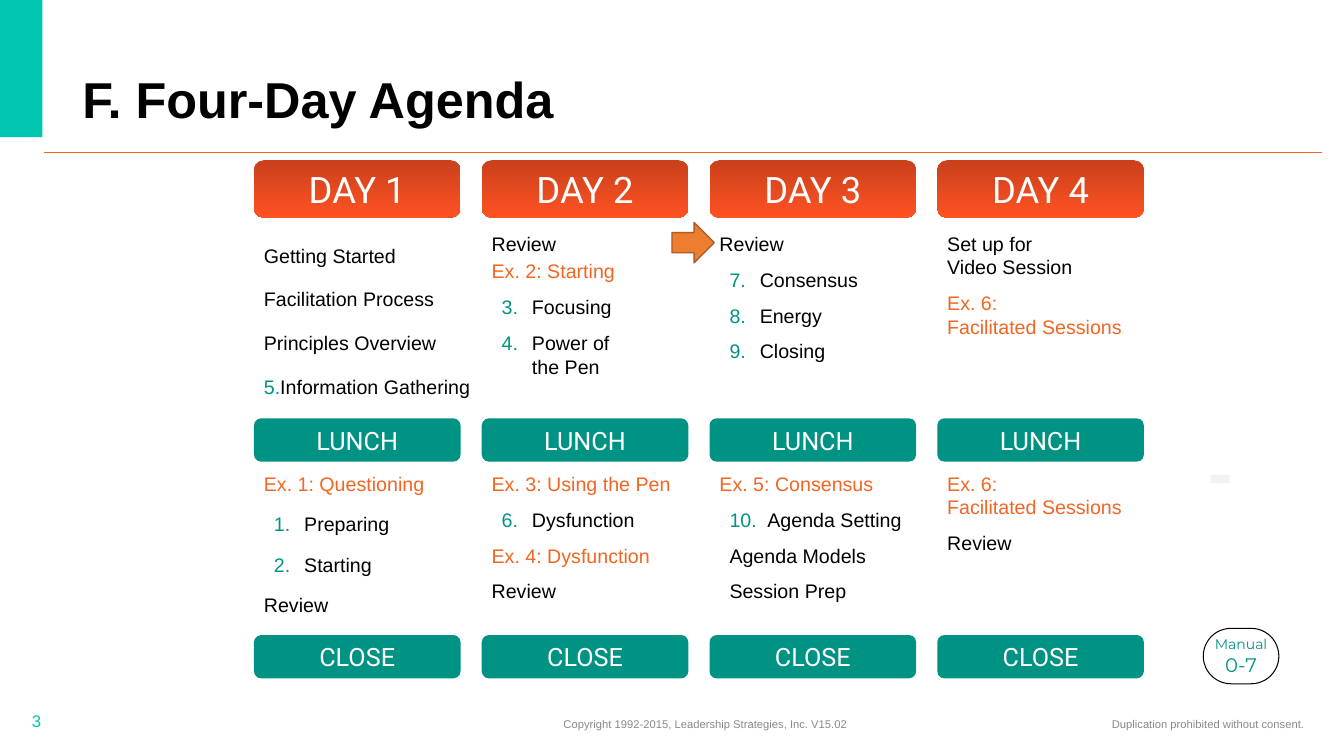
from copy import deepcopy
from dataclasses import dataclass
from typing import NamedTuple, Optional, Sequence

from lxml.etree import SubElement
from pptx import Presentation
from pptx.dml.color import RGBColor
from pptx.enum.shapes import MSO_CONNECTOR, MSO_SHAPE
from pptx.enum.text import MSO_ANCHOR, PP_ALIGN
from pptx.oxml.ns import qn
from pptx.util import Pt


@dataclass(frozen=True)
class Theme:
    black: str = "000000"
    white: str = "FFFFFF"
    teal: str = "009383"
    mint: str = "00C7B1"
    orange: str = "F26522"
    day_top: str = "C9401B"
    day_bottom: str = "FF5223"
    arrow: str = "ED7D31"
    arrow_edge: str = "AF5C24"
    grey: str = "898989"
    pale: str = "F2F2F2"
    text: str = "Arial"
    band: str = "Roboto"
    badge: str = "Montserrat"
    title_size: float = 36
    day_size: float = 26
    break_size: float = 18
    body_size: float = 14
    badge_size: float = 10
    dash_size: float = 48
    footer_size: float = 8
    page_size: float = 12


THEME = Theme()


class Box(NamedTuple):
    left: float
    top: float
    width: float
    height: float


class Line(NamedTuple):
    text: str
    color: Optional[str] = None
    number: Optional[int] = None
    margin: float = 0
    hanging: float = 0
    after: Optional[float] = None
    size: Optional[float] = None


class Day(NamedTuple):
    name: str
    morning: Sequence[Line]
    afternoon: Sequence[Line]
    morning_leading: float = 1
    morning_before: float = 2.8
    afternoon_before: float = 2.8
    morning_width: float = 147.6


def exercise(text: str) -> Line:
    return Line(text, THEME.orange)


def module(number: int, text: str, margin: float = 28.8, hanging: float = 21.6) -> Line:
    return Line(text, number=number, margin=margin, hanging=hanging)


# Agenda content
DAYS = [
    Day("DAY 1",
        [Line("Getting Started"), Line("Facilitation Process"), Line("Principles Overview"),
         module(5, "Information Gathering", 9.36, 9.36)],
        [exercise("Ex. 1: Questioning"), module(1, "Preparing"), module(2, "Starting"),
         Line("Review")],
        morning_leading=1.5, morning_before=0, afternoon_before=6, morning_width=187.9),
    Day("DAY 2",
        [Line("Review", after=0), exercise("Ex. 2: Starting"), module(3, "Focusing"),
         module(4, "Power of\nthe Pen")],
        [exercise("Ex. 3: Using the Pen"), module(6, "Dysfunction"),
         exercise("Ex. 4: Dysfunction"), Line("Review")]),
    Day("DAY 3",
        [Line("Review"), module(7, "Consensus"), module(8, "Energy"), module(9, "Closing")],
        [exercise("Ex. 5: Consensus"), module(10, "Agenda Setting", 34.2, 27),
         Line("Agenda Models", margin=34.2, hanging=27),
         Line("Session Prep", margin=28.8, hanging=21.6)]),
    Day("DAY 4",
        [Line("Set up for\nVideo Session"), exercise("Ex. 6:\nFacilitated Sessions")],
        [exercise("Ex. 6:\nFacilitated Sessions"), Line("Review")]),
]
FIRST_LEFT, DAY_PITCH, DAY_WIDTH = 181.4, 162.7, 147.6


def rgb(value: str) -> RGBColor:
    return RGBColor.from_string(value)


def add_number(paragraph, number: int) -> None:
    props = paragraph._p.get_or_add_pPr()
    SubElement(SubElement(props, qn("a:buClr")), qn("a:srgbClr"), val=THEME.teal)
    SubElement(props, qn("a:buFont"), typeface=THEME.text)
    SubElement(props, qn("a:buAutoNum"), type="arabicPeriod", startAt=str(number))


def write(frame, lines: Sequence[Line], *, size: float, color: str = THEME.black,
          font: str = THEME.text, bold: bool = False, align=PP_ALIGN.LEFT,
          anchor=MSO_ANCHOR.TOP, wrap: bool = True, leading: float = 1,
          before: float = 0, after: float = 0) -> None:
    frame.word_wrap = wrap
    frame.vertical_anchor = anchor
    start = None
    for index, line in enumerate(lines):
        paragraph = frame.paragraphs[0] if index == 0 else frame.add_paragraph()
        paragraph.text = line.text
        paragraph.alignment = align
        paragraph.line_spacing = leading
        paragraph.space_before = Pt(before if index else 0)
        paragraph.space_after = Pt(after if line.after is None else line.after)
        if line.hanging:
            props = paragraph._p.get_or_add_pPr()
            props.set("marL", str(Pt(line.margin)))
            props.set("indent", str(-Pt(line.hanging)))
        # A run of numbered lines shares the number it starts from
        start = None if line.number is None else (start or line.number)
        if start is not None:
            add_number(paragraph, start)
        for run in paragraph.runs:
            run.font.name = font
            run.font.size = Pt(line.size or size)
            run.font.bold = bold
            run.font.color.rgb = rgb(line.color or color)
        for line_break in paragraph._p.findall(qn("a:br")):
            line_break.insert(0, deepcopy(paragraph.runs[0]._r.rPr))


def add_text(slide, box: Box, lines: Sequence[Line], **style) -> None:
    write(slide.shapes.add_textbox(*map(Pt, box)).text_frame, lines, **style)


def add_block(slide, kind, box: Box, fill: str, edge: Optional[str] = None,
              edge_width: float = 1):
    block = slide.shapes.add_shape(kind, *map(Pt, box))
    block.shadow.inherit = False
    block.fill.solid()
    block.fill.fore_color.rgb = rgb(fill)
    if edge:
        block.line.color.rgb = rgb(edge)
        block.line.width = Pt(edge_width)
    else:
        block.line.fill.background()
    return block


def add_band(slide, box: Box, label: str, size: float):
    band = add_block(slide, MSO_SHAPE.ROUNDED_RECTANGLE, box, THEME.teal)
    write(band.text_frame, [Line(label)], size=size, color=THEME.white, font=THEME.band,
          align=PP_ALIGN.CENTER, anchor=MSO_ANCHOR.MIDDLE)
    return band


def add_day(slide, left: float, day: Day) -> None:
    header = add_band(slide, Box(left, 114.5, DAY_WIDTH, 41), day.name, THEME.day_size)
    header.fill.gradient()
    header.fill.gradient_angle = 270
    for stop, color, position in zip(header.fill.gradient_stops,
                                     (THEME.day_top, THEME.day_bottom), (0, 1)):
        stop.color.rgb = rgb(color)
        stop.position = position
    for top, label in ((298.8, "LUNCH"), (453.6, "CLOSE")):
        add_band(slide, Box(left, top, DAY_WIDTH, 31), label, THEME.break_size)
    add_text(slide, Box(left, 162, day.morning_width, 136), day.morning,
             size=THEME.body_size, leading=day.morning_leading,
             before=day.morning_before, after=6)
    add_text(slide, Box(left, 333.4, DAY_WIDTH, 120), day.afternoon,
             size=THEME.body_size, before=day.afternoon_before, after=6)


def main() -> None:
    deck = Presentation()
    deck.slide_width, deck.slide_height = Pt(960), Pt(540)
    slide = deck.slides.add_slide(deck.slide_layouts[6])

    # Title and its rule
    add_block(slide, MSO_SHAPE.RECTANGLE, Box(-1.4, -1.4, 31.7, 99.4), THEME.mint)
    rule = slide.shapes.add_connector(MSO_CONNECTOR.STRAIGHT, Pt(31.7), Pt(109),
                                      Pt(944.6), Pt(109))
    rule.line.color.rgb = rgb(THEME.orange)
    rule.line.width = Pt(0.5)
    SubElement(rule._element.spPr, qn("a:effectLst"))
    add_text(slide, Box(51.8, 41, 584.6, 54.7), [Line("F. Four-Day Agenda")],
             size=THEME.title_size, bold=True, anchor=MSO_ANCHOR.BOTTOM, leading=0.9)

    # Day columns and the marker between days 2 and 3
    for index, day in enumerate(DAYS):
        add_day(slide, FIRST_LEFT + index * DAY_PITCH, day)
    add_block(slide, MSO_SHAPE.RIGHT_ARROW, Box(480, 159, 30.2, 28.8), THEME.arrow,
              THEME.arrow_edge)

    # Manual page badge and pale dash
    badge = add_block(slide, MSO_SHAPE.ROUNDED_RECTANGLE, Box(859.5, 448.8, 54, 39.6),
                      THEME.white, THEME.black, 0.75)
    badge.adjustments[0] = 0.5
    write(badge.text_frame, [Line("Manual"), Line("0-7", size=THEME.body_size)],
          size=THEME.badge_size, color=THEME.teal, font=THEME.badge,
          align=PP_ALIGN.CENTER, anchor=MSO_ANCHOR.MIDDLE, wrap=False)
    add_text(slide, Box(855.4, 304.6, 31, 65.5), [Line("-")], size=THEME.dash_size,
             color=THEME.pale, font=THEME.badge, bold=True, wrap=False)

    # Footer
    footer = dict(size=THEME.footer_size, color=THEME.grey, anchor=MSO_ANCHOR.MIDDLE)
    add_text(slide, Box(260.6, 502.6, 486.7, 28.8),
             [Line("Copyright 1992-2015, Leadership Strategies, Inc. V15.02")],
             align=PP_ALIGN.CENTER, **footer)
    add_text(slide, Box(533.5, 502.6, 405.4, 28.8),
             [Line("Duplication prohibited without consent.")],
             align=PP_ALIGN.RIGHT, **footer)
    add_text(slide, Box(15.8, 500.4, 216, 28.8), [Line("3")], size=THEME.page_size,
             color=THEME.mint, anchor=MSO_ANCHOR.MIDDLE)
    deck.save("out.pptx")


if __name__ == "__main__":
    main()
